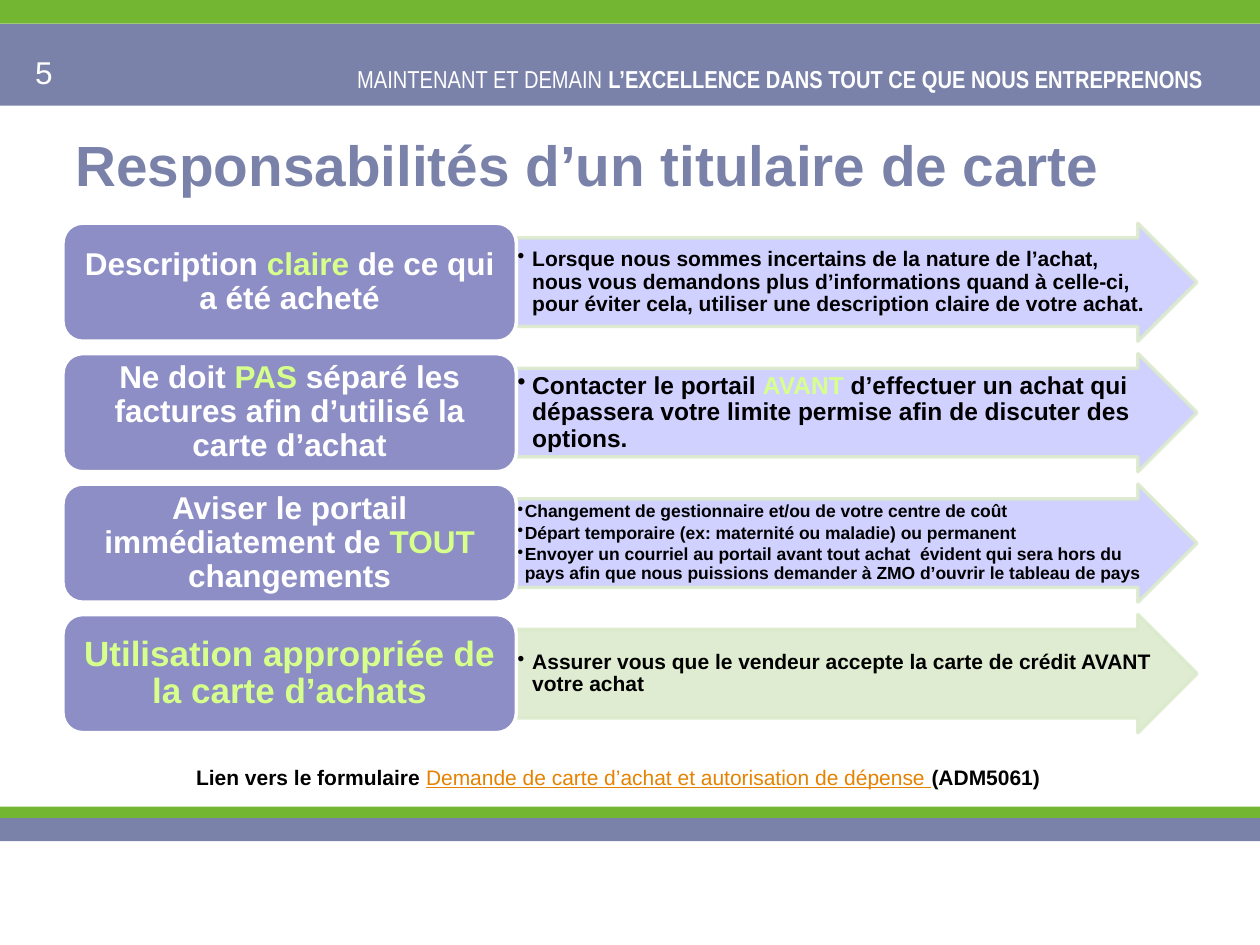
from dataclasses import dataclass

from lxml import etree
from pptx import Presentation
from pptx import util as u
from pptx.dml.color import RGBColor
from pptx.enum import shapes, text
from pptx.oxml.ns import qn


@dataclass(frozen=True)
class Theme:
    slate: str = "7A82AA"
    green: str = "73B632"
    label: str = "8D8EC5"
    lilac: str = "CDCDFF"
    pale: str = "DCEACC"
    lime: str = "D6FF8C"
    link: str = "E68200"
    white: str = "FFFFFF"
    black: str = "000000"
    font: str = "Arial"
    narrow: str = "Arial Narrow"
    title: float = 32.4
    big: float = 20
    normal: float = 18
    strong: float = 14
    small: float = 12
    tiny: float = 10


T = Theme()
LEFT, CENTER, RIGHT = text.PP_ALIGN.LEFT, text.PP_ALIGN.CENTER, text.PP_ALIGN.RIGHT


class SlideBuilder:
    def __init__(self, prs, theme):
        self.t = theme
        self.s = prs.slides.add_slide(prs.slide_layouts[5])

    def frame(self, tf, anchor, margins):
        """Margins are centimetres: left and right, then top and bottom."""
        side, edge = (u.Cm(m) for m in margins)
        fmt = dict(word_wrap=True, auto_size=text.MSO_AUTO_SIZE.NONE,
                   vertical_anchor=anchor, margin_left=side, margin_right=side,
                   margin_top=edge, margin_bottom=edge)
        for name, value in fmt.items():
            setattr(tf, name, value)

    def add_runs(self, p, runs, size, color, align=LEFT, **base):
        """Each run is a string or a (string, format dict) pair."""
        p.alignment = align
        for run in runs:
            words, own = (run, {}) if isinstance(run, str) else run
            fmt = dict(name=self.t.font, size=u.Pt(size), color=color, bold=False)
            fmt.update(base)
            fmt.update(own)
            r = p.add_run()
            r.text = words
            r.font.color.rgb = RGBColor.from_string(fmt.pop("color"))
            for name, value in fmt.items():
                setattr(r.font, name, value)

    def title(self, words, box):
        sp = self.s.shapes.title
        for name, value in zip(("left", "top", "width", "height"), box):
            setattr(sp, name, u.Cm(value))
        self.frame(sp.text_frame, text.MSO_ANCHOR.MIDDLE, (0.25, 0.13))
        self.add_runs(sp.text_frame.paragraphs[0], [words], self.t.title,
                      self.t.slate, bold=True)

    def textbox(self, runs, box, size, color, align=LEFT, edge=0.13, **base):
        sp = self.s.shapes.add_textbox(*map(u.Cm, box))
        self.frame(sp.text_frame, text.MSO_ANCHOR.TOP, (0.25, edge))
        self.add_runs(sp.text_frame.paragraphs[0], runs, size, color, align, **base)

    def shape(self, kind, box, fill, line=None, alpha=None):
        """Alpha is the opacity of fill and line in percent."""
        sp = self.s.shapes.add_shape(kind, *map(u.Cm, box))
        sp.shadow.inherit = False
        sp.fill.solid()
        sp.fill.fore_color.rgb = RGBColor.from_string(fill)
        if line:
            sp.line.width = u.Pt(2)
            sp.line.color.rgb = RGBColor.from_string(line)
        else:
            sp.line.fill.background()
        if alpha:
            for clr in sp._element.spPr.iter(qn("a:srgbClr")):
                etree.SubElement(clr, qn("a:alpha"), val=str(alpha * 1000))
        return sp

    def band(self, top, height, color):
        self.shape(shapes.MSO_SHAPE.RECTANGLE, (0, top, 25.4, height), color)

    def label(self, runs, box, size):
        sp = self.shape(shapes.MSO_SHAPE.ROUNDED_RECTANGLE, box, self.t.label, self.t.white)
        self.frame(sp.text_frame, text.MSO_ANCHOR.MIDDLE, (0.18, 0.1))
        p = sp.text_frame.paragraphs[0]
        p.line_spacing = 0.9
        self.add_runs(p, runs, size, self.t.white, CENTER, bold=True)

    def arrow(self, items, box, size, fill, indent):
        sp = self.shape(shapes.MSO_SHAPE.RIGHT_ARROW, box, fill, self.t.pale, alpha=90)
        sp.adjustments[0], sp.adjustments[1] = 0.75, 0.5
        tf = sp.text_frame
        self.frame(tf, text.MSO_ANCHOR.MIDDLE, (0.02, 0.02))
        for i, runs in enumerate(items):
            p = tf.add_paragraph() if i else tf.paragraphs[0]
            p.level = 1
            p.line_spacing = 0.9
            p.space_after = u.Pt(0.15 * size)
            pPr = p._p.get_or_add_pPr()
            pPr.set("marL", str(u.Cm(indent)))
            pPr.set("indent", str(-u.Cm(indent)))
            etree.SubElement(pPr, qn("a:buChar"), char="•")
            self.add_runs(p, runs, size, self.t.black, bold=True)


LIME = dict(color=T.lime)
# label runs, label size, bullet items, bullet size, arrow fill, bullet indent
ROWS = [
    (["Description ", ("claire", LIME), " de ce qui a été acheté"], T.normal,
     [["Lorsque nous sommes incertains de la nature de l’achat, nous vous demandons "
       "plus d’informations quand à celle-ci, pour éviter cela, utiliser une "
       "description claire de votre achat."]], T.small, T.lilac, 0.3),
    (["Ne doit ", ("PAS", LIME), " séparé les factures afin d’utilisé la carte d’achat"],
     T.normal,
     [["Contacter le portail ", ("AVANT", LIME), " d’effectuer un achat qui dépassera "
       "votre limite permise afin de discuter des options."]], T.strong, T.lilac, 0.3),
    (["Aviser le portail immédiatement de ", ("TOUT", LIME), " changements"], T.normal,
     [["Changement de gestionnaire et/ou de votre centre de coût"],
      ["Départ temporaire (ex: maternité ou maladie) ou permanent"],
      ["Envoyer un courriel au portail avant tout achat  évident qui sera hors du pays "
       "afin que nous puissions demander à ZMO d’ouvrir le tableau de pays"]],
     T.tiny, T.lilac, 0.15),
    ([("Utilisation appropriée de la carte d’achats", LIME)], T.big,
     [["Assurer vous que le vendeur accepte la carte de crédit AVANT votre achat"]],
     T.small, T.pale, 0.3),
]


def main():
    prs = Presentation()
    prs.slide_width, prs.slide_height = u.Cm(25.4), u.Cm(19.05)
    b = SlideBuilder(prs, T)

    for top, height, color in [(0.48, 1.65, T.slate), (0, 0.48, T.green),
                               (16.48, 0.48, T.slate), (16.26, 0.23, T.green)]:
        b.band(top, height, color)
    b.textbox(["MAINTENANT ET DEMAIN ",
               ("L’EXCELLENCE DANS TOUT CE QUE NOUS ENTREPRENONS", dict(bold=True))],
              (6.12, 1.17, 18.39, 0.86), T.strong, T.white, RIGHT, name=T.narrow)
    b.textbox(["5"], (0.46, 0.94, 5.92, 1.02), T.normal, T.white)
    b.title("Responsabilités d’un titulaire de carte", (1.27, 2.51, 22.86, 1.57))

    top, pitch, height, left, label_w, arrow_w = 4.5, 2.63, 2.38, 1.27, 9.14, 13.72
    for i, (label, label_size, items, size, fill, indent) in enumerate(ROWS):
        y = top + i * pitch
        b.arrow(items, (left + label_w, y, arrow_w, height), size, fill, indent)
        b.label(label, (left, y, label_w, height), label_size)

    b.textbox(["Lien vers le formulaire ",
               ("Demande de carte d’achat et autorisation de dépense ",
                dict(color=T.link, bold=False, underline=True)),
               "(ADM5061)"],
              (1.27, 15.06, 22.38, 1.02), T.small, T.black, CENTER, edge=0.35, bold=True)
    prs.save("out.pptx")


if __name__ == "__main__":
    main()
